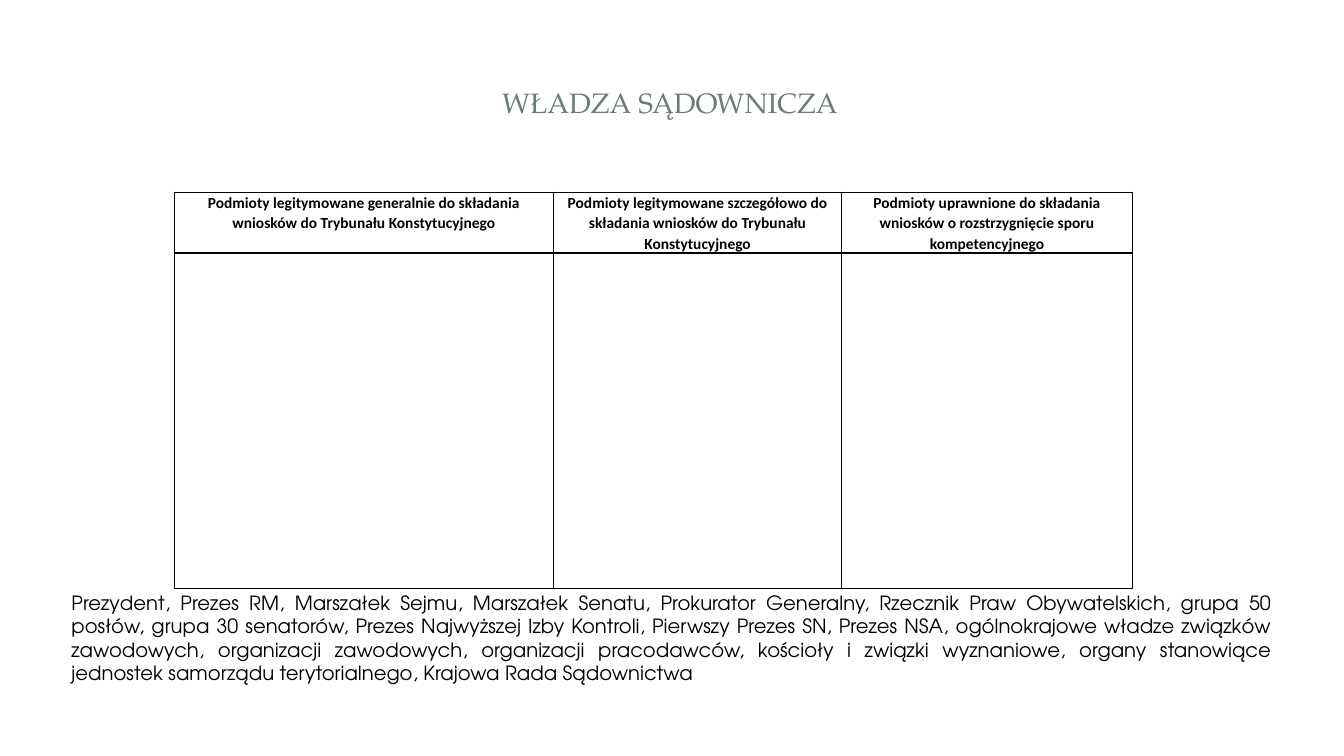
from dataclasses import dataclass

from lxml.etree import SubElement
from pptx import Presentation
from pptx.dml.color import RGBColor
from pptx.enum.shapes import MSO_SHAPE
from pptx.enum.text import MSO_ANCHOR, PP_ALIGN
from pptx.oxml.ns import qn
from pptx.slide import Slide
from pptx.table import _Cell
from pptx.text.text import _Paragraph
from pptx.util import Inches, Pt

BLACK = RGBColor(0x00, 0x00, 0x00)
SAGE = RGBColor(0x6B, 0x7D, 0x72)
WHITE = RGBColor(0xFF, 0xFF, 0xFF)

TITLE_FORMAT = {"name": "TeX Gyre Pagella", "size": Pt(20)}
HEADER_FORMAT = {"name": "Calibri", "size": Pt(11), "bold": True}
BODY_FORMAT = {"name": "TeX Gyre Adventor", "size": Pt(14)}

HEADER_PARAGRAPH = {"alignment": PP_ALIGN.CENTER, "line_spacing": 1.07, "space_after": Pt(8)}
CELL_MARGINS = {
    "margin_left": Inches(0.07),
    "margin_right": Inches(0.07),
    "margin_top": 0,
    "margin_bottom": 0,
}
ROW_HEIGHTS = (0.6, 3.33)


@dataclass(frozen=True)
class Panel:
    shape: MSO_SHAPE
    left: float
    top: float
    width: float
    height: float
    opacity: int = 100
    corner: float = 0


@dataclass(frozen=True)
class TextBlock:
    left: float
    top: float
    width: float
    height: float
    text: str
    font: dict
    color: RGBColor
    alignment: PP_ALIGN
    anchor: MSO_ANCHOR


@dataclass(frozen=True)
class Column:
    width: float
    heading: str


PANELS = (
    Panel(MSO_SHAPE.ROUNDED_RECTANGLE, 0.13, 0.11, 13.07, 7.29, corner=0.017),
    Panel(MSO_SHAPE.RECTANGLE, 0.4, 0.3, 12.53, 1.45, opacity=83),
    Panel(MSO_SHAPE.RECTANGLE, 0.54, 0.41, 12.22, 1.22),
)

TEXT_BLOCKS = (
    TextBlock(
        0.62, 0.44, 12.05, 1.14, "WŁADZA SĄDOWNICZA",
        TITLE_FORMAT, SAGE, PP_ALIGN.CENTER, MSO_ANCHOR.MIDDLE,
    ),
    TextBlock(
        0.61, 5.81, 12.11, 1.35,
        "Prezydent, Prezes RM, Marszałek Sejmu, Marszałek Senatu, Prokurator Generalny, "
        "Rzecznik Praw Obywatelskich, grupa 50 posłów, grupa 30 senatorów, "
        "Prezes Najwyższej Izby Kontroli, Pierwszy Prezes SN, Prezes NSA, "
        "ogólnokrajowe władze związków zawodowych, organizacji zawodowych, "
        "organizacji pracodawców, kościoły i związki wyznaniowe, "
        "organy stanowiące jednostek samorządu terytorialnego, Krajowa Rada Sądownictwa",
        BODY_FORMAT, BLACK, PP_ALIGN.JUSTIFY, MSO_ANCHOR.TOP,
    ),
)

COLUMNS = (
    Column(3.76, "Podmioty legitymowane generalnie do składania wniosków do Trybunału Konstytucyjnego"),
    Column(2.86, "Podmioty legitymowane szczegółowo do składania wniosków do Trybunału Konstytucyjnego"),
    Column(2.88, "Podmioty uprawnione do składania wniosków o rozstrzygnięcie sporu kompetencyjnego"),
)


def apply_format(target: object, values: dict) -> None:
    for name, value in values.items():
        setattr(target, name, value)


def add_panel(page: Slide, panel: Panel) -> None:
    shape = page.shapes.add_shape(
        panel.shape, Inches(panel.left), Inches(panel.top), Inches(panel.width), Inches(panel.height)
    )
    shape.shadow.inherit = False
    shape.line.fill.background()
    shape.fill.solid()
    shape.fill.fore_color.rgb = WHITE
    if panel.corner:
        shape.adjustments[0] = panel.corner
    if panel.opacity < 100:
        color = shape._element.spPr.find(qn("a:solidFill")).find(qn("a:srgbClr"))
        SubElement(color, qn("a:alpha"), val=str(panel.opacity * 1000))


def write_span(para: _Paragraph, text: str, font: dict, color: RGBColor) -> None:
    span = para.add_run()
    span.text = text
    apply_format(span.font, font)
    span.font.color.rgb = color


def add_text(page: Slide, block: TextBlock) -> None:
    box = page.shapes.add_textbox(
        Inches(block.left), Inches(block.top), Inches(block.width), Inches(block.height)
    )
    frame = box.text_frame
    frame.word_wrap = True
    frame.vertical_anchor = block.anchor
    para = frame.paragraphs[0]
    para.alignment = block.alignment
    write_span(para, block.text, block.font, block.color)


def style_cell(cell: _Cell) -> None:
    apply_format(cell, CELL_MARGINS)
    properties = cell._tc.get_or_add_tcPr()
    for side in ("lnL", "lnR", "lnT", "lnB"):
        line = SubElement(properties, qn(f"a:{side}"), w=str(Pt(1)))
        fill = SubElement(line, qn("a:solidFill"))
        SubElement(fill, qn("a:srgbClr"), val=str(BLACK))
    cell.fill.background()


def add_applicants_table(page: Slide) -> None:
    width = sum(column.width for column in COLUMNS)
    table = page.shapes.add_table(
        len(ROW_HEIGHTS), len(COLUMNS),
        Inches(1.73), Inches(1.91), Inches(width), Inches(sum(ROW_HEIGHTS)),
    ).table
    table.first_row = False
    table.horz_banding = False
    for row, height in zip(table.rows, ROW_HEIGHTS):
        row.height = Inches(height)
    for index, column in enumerate(COLUMNS):
        table.columns[index].width = Inches(column.width)
        para = table.cell(0, index).text_frame.paragraphs[0]
        apply_format(para, HEADER_PARAGRAPH)
        write_span(para, column.heading, HEADER_FORMAT, BLACK)
    for cell in table.iter_cells():
        style_cell(cell)


def main() -> None:
    deck = Presentation()
    deck.slide_width = Inches(13.33)
    deck.slide_height = Inches(7.5)
    page = deck.slides.add_slide(deck.slide_layouts[6])
    for panel in PANELS:
        add_panel(page, panel)
    title, applicants = TEXT_BLOCKS
    add_text(page, title)
    add_applicants_table(page)
    add_text(page, applicants)
    deck.save("out.pptx")


if __name__ == "__main__":
    main()
